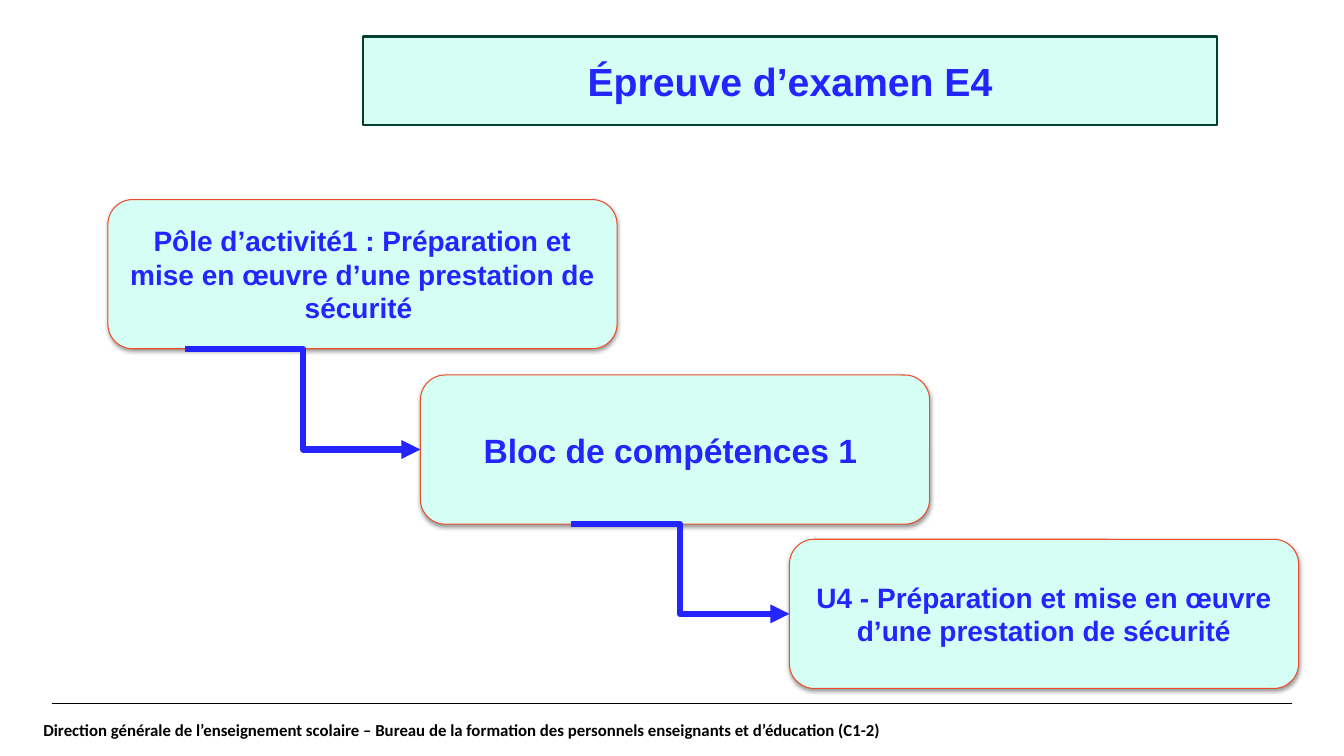
from dataclasses import dataclass

from lxml import etree
from pptx import Presentation
from pptx.dml.color import RGBColor
from pptx.enum.shapes import MSO_CONNECTOR, MSO_SHAPE
from pptx.enum.text import MSO_ANCHOR, MSO_AUTO_SIZE, PP_ALIGN
from pptx.oxml.ns import qn
from pptx.util import Inches, Pt

ROUNDED = MSO_SHAPE.ROUNDED_RECTANGLE
STRAIGHT, ELBOW = MSO_CONNECTOR.STRAIGHT, MSO_CONNECTOR.ELBOW
MIDDLE = MSO_ANCHOR.MIDDLE
CENTER, LEFT = PP_ALIGN.CENTER, PP_ALIGN.LEFT
NO_AUTOFIT = MSO_AUTO_SIZE.NONE

TITLE_ONLY = 5
LEFT_SIDE = 1
BOX_W, BOX_H = 5.05, 1.48
MINT, BLUE, ORANGE, GREEN, BLACK = "D5FFF4", "2424FF", "E94F2D", "004130", "000000"


@dataclass
class Step:
    text: str
    left: float
    top: float
    size: int
    arrow_start: float | None = None  # where the arrow to the next step leaves the bottom edge


STEPS = [
    Step("Pôle d’activité1 : Préparation et mise en œuvre d’une prestation de sécurité ",
         1.07, 1.98, 20, 1.84),
    Step("Bloc de compétences 1 ", 4.17, 3.72, 24, 5.66),
    Step("U4 - Préparation et mise en œuvre d’une prestation de sécurité", 7.83, 5.35, 20),
]


def rgb(color: str) -> RGBColor:
    return RGBColor.from_string(color)


def set_text(sp, text: str, size: int, color: str = BLUE, font: str = "Arial",
             align=CENTER) -> None:
    tf = sp.text_frame
    tf.text = text
    tf.word_wrap = True
    tf.auto_size = NO_AUTOFIT
    tf.vertical_anchor = MIDDLE
    p = tf.paragraphs[0]
    p.alignment = align
    f = p.runs[0].font
    f.name, f.size, f.bold = font, Pt(size), True
    f.color.rgb = rgb(color)


def paint(sp, line: str, width: float) -> None:
    sp.fill.solid()
    sp.fill.fore_color.rgb = rgb(MINT)
    sp.line.color.rgb = rgb(line)
    sp.line.width = Pt(width)


def add_shadow(sp) -> None:
    """Give the shape a soft shadow straight below it."""
    sp.shadow.inherit = False
    effects = sp._element.spPr.find(qn("a:effectLst"))
    shadow = etree.SubElement(effects, qn("a:outerShdw"), blurRad=str(Pt(3.1)),
                              dist=str(Pt(1.6)), dir="5400000", rotWithShape="0")
    color = etree.SubElement(shadow, qn("a:srgbClr"), val=BLACK)
    etree.SubElement(color, qn("a:alpha"), val="38000")


def add_line(slide, kind, x1: float, y1: float, x2: float, y2: float,
             color: str, width: float):
    line = slide.shapes.add_connector(kind, Inches(x1), Inches(y1), Inches(x2), Inches(y2))
    line.line.color.rgb = rgb(color)
    line.line.width = Pt(width)
    etree.SubElement(line._element.spPr, qn("a:effectLst"))
    return line


def add_title(slide) -> None:
    title = slide.shapes.title
    title.left, title.top = Inches(3.6), Inches(0.36)
    title.width, title.height = Inches(8.47), Inches(0.88)
    geometry = etree.SubElement(title._element.spPr, qn("a:prstGeom"), prst="roundRect")
    etree.SubElement(geometry, qn("a:avLst"))
    paint(title, GREEN, 2)
    set_text(title, "Épreuve d’examen E4", 28)


def add_footer(slide) -> None:
    add_line(slide, STRAIGHT, 0.52, 6.98, 12.81, 6.98, BLACK, 0.8)
    box = slide.shapes.add_textbox(Inches(0.43), Inches(6.98), Inches(12.54), Inches(0.52))
    set_text(box, "Direction générale de l’enseignement scolaire – Bureau de la formation "
             "des personnels enseignants et d’éducation (C1-2)", 12, BLACK, "Calibri", LEFT)
    tf = box.text_frame
    tf.margin_left = tf.margin_right = tf.margin_top = tf.margin_bottom = 0


def add_step(slide, step: Step):
    sp = slide.shapes.add_shape(ROUNDED, Inches(step.left), Inches(step.top),
                                Inches(BOX_W), Inches(BOX_H))
    paint(sp, ORANGE, 0.75)
    add_shadow(sp)
    set_text(sp, step.text, step.size)
    return sp


def add_arrow(slide, step: Step, following: Step, target) -> None:
    arrow = add_line(slide, ELBOW, step.arrow_start, step.top + BOX_H,
                     following.left, following.top + BOX_H / 2, BLUE, 4.5)
    arrow.end_connect(target, LEFT_SIDE)
    ln = arrow.line._get_or_add_ln()
    etree.SubElement(ln, qn("a:round"))
    etree.SubElement(ln, qn("a:tailEnd"), type="triangle")


def main() -> None:
    prs = Presentation()
    prs.slide_width, prs.slide_height = Inches(13.33), Inches(7.5)
    slide = prs.slides.add_slide(prs.slide_layouts[TITLE_ONLY])
    add_title(slide)
    add_footer(slide)
    boxes = [add_step(slide, step) for step in STEPS]
    for step, following, target in zip(STEPS, STEPS[1:], boxes[1:]):
        add_arrow(slide, step, following, target)
    prs.save("out.pptx")


if __name__ == "__main__":
    main()
